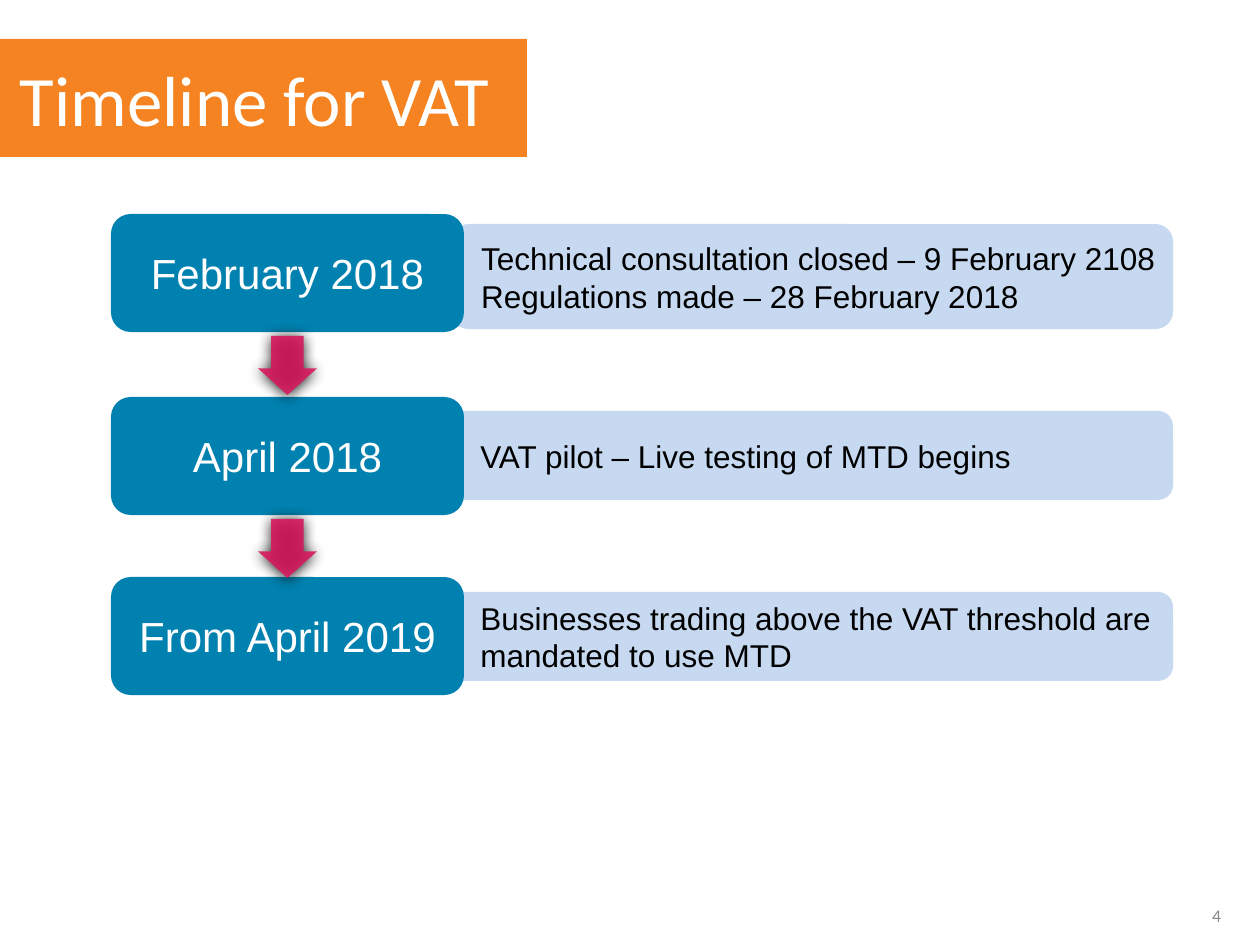
import pptx
import pptx.util
import pptx.oxml
import pptx.oxml.ns
from pptx.dml.color import RGBColor
from pptx.enum.shapes import MSO_SHAPE
from pptx.enum.text import MSO_ANCHOR, PP_ALIGN

TITLE = "Timeline for VAT"
PAGE_NUMBER = "4"
# date, label top, detail, detail top, detail height
STAGES = [
    ("February 2018", 214,
     "Technical consultation closed – 9 February 2108 Regulations made – 28 February 2018", 224, 105),
    ("April 2018", 397, "VAT pilot – Live testing of MTD begins", 411, 89),
    ("From April 2019", 577,
     "Businesses trading above the VAT threshold are mandated to use MTD", 592, 89),
]

THEME = {
    "title": {"name": "Calibri", "size": 40.5, "color": "FFFFFF", "fill": "F58321"},
    "date": {"name": "Arial", "size": 24, "color": "FFFFFF", "fill": "0181AF"},
    "detail": {"name": "Arial", "size": 18, "color": "000000", "fill": "C6D9F1"},
    "number": {"name": "Calibri", "size": 10.2, "color": "8C8C8C"},
    "arrow": {"fill": "D61B5E"},
}

LABEL_LEFT, LABEL_WIDTH, LABEL_HEIGHT = 111, 353, 118
DETAIL_LEFT, DETAIL_WIDTH = 451, 722
ARROW_SIZE, ARROW_GAP = 59, 4
WIDE_INSETS = (20, 10, 20, 10)
LABEL_INSETS = (13, 6, 13, 6)
DETAIL_INSETS = (25, 6, 0, 6)


def px(length):
    return pptx.util.Emu(round(length * 914400 / 126))


def write(shape, text, role, align, insets):
    style = THEME[role]
    frame = shape.text_frame
    left, top, right, bottom = map(px, insets)
    settings = {"word_wrap": True, "vertical_anchor": MSO_ANCHOR.MIDDLE,
                "margin_left": left, "margin_top": top,
                "margin_right": right, "margin_bottom": bottom}
    for name, value in settings.items():
        setattr(frame, name, value)
    para = frame.paragraphs[0]
    para.alignment = align
    span = para.add_run()
    span.text = text
    for name, value in {"name": style["name"], "size": pptx.util.Pt(style["size"])}.items():
        setattr(span.font, name, value)
    span.font.color.rgb = RGBColor.from_string(style["color"])


def add_block(page, kind, bounds, role):
    """Add a filled shape without outline or shadow."""
    block = page.shapes.add_shape(kind, *map(px, bounds))
    block.shadow.inherit = False
    block.fill.solid()
    block.fill.fore_color.rgb = RGBColor.from_string(THEME[role]["fill"])
    block.line.fill.background()
    return block


def add_arrow(page, top):
    """Add a slightly transparent down arrow with a soft shadow, centred under the labels."""
    left = LABEL_LEFT + (LABEL_WIDTH - ARROW_SIZE) / 2
    arrow = add_block(page, MSO_SHAPE.DOWN_ARROW, (left, top, ARROW_SIZE, ARROW_SIZE), "arrow")
    arrow.adjustments[0] = 0.55
    arrow.adjustments[1] = 0.45
    qn = pptx.oxml.ns.qn
    properties = arrow.element.spPr
    color = properties.find(qn("a:solidFill")).find(qn("a:srgbClr"))
    namespace = pptx.oxml.ns.nsdecls("a")
    color.append(pptx.oxml.parse_xml(f'<a:alpha {namespace} val="90000"/>'))
    properties.find(qn("a:effectLst")).append(pptx.oxml.parse_xml(
        f'<a:outerShdw {namespace} blurRad="{pptx.util.Pt(8.5)}" dist="{pptx.util.Pt(1)}" '
        'dir="5400000" rotWithShape="0"><a:srgbClr val="000000"/></a:outerShdw>'))


def main():
    deck = pptx.Presentation()
    deck.slide_width, deck.slide_height = px(1260), px(945)
    page = deck.slides.add_slide(deck.slide_layouts[6])

    banner = add_block(page, MSO_SHAPE.RECTANGLE, (0, 39, 527, 118), "title")
    write(banner, TITLE, "title", PP_ALIGN.LEFT, WIDE_INSETS)

    for date, label_top, detail, detail_top, detail_height in STAGES:
        panel = add_block(page, MSO_SHAPE.ROUNDED_RECTANGLE,
                          (DETAIL_LEFT, detail_top, DETAIL_WIDTH, detail_height), "detail")
        write(panel, detail, "detail", PP_ALIGN.LEFT, DETAIL_INSETS)
        label = add_block(page, MSO_SHAPE.ROUNDED_RECTANGLE,
                          (LABEL_LEFT, label_top, LABEL_WIDTH, LABEL_HEIGHT), "date")
        write(label, date, "date", PP_ALIGN.CENTER, LABEL_INSETS)

    for stage in STAGES[:-1]:
        add_arrow(page, stage[1] + LABEL_HEIGHT + ARROW_GAP)

    number = page.shapes.add_textbox(*map(px, (947, 890, 294, 50)))
    write(number, PAGE_NUMBER, "number", PP_ALIGN.RIGHT, WIDE_INSETS)

    deck.save("out.pptx")


if __name__ == "__main__":
    main()
